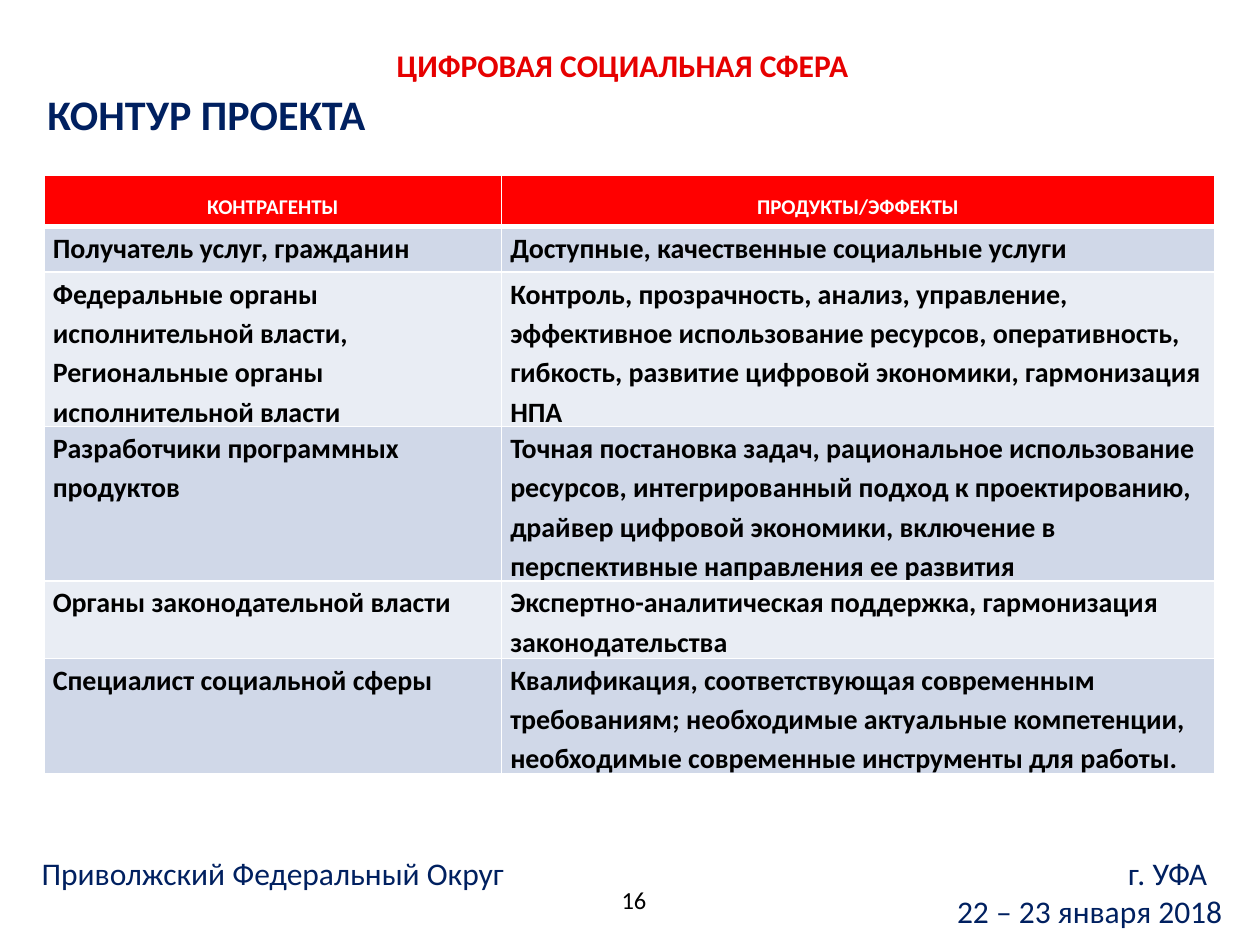
"""Build the project outline slide with a table of counterparties and effects."""
from lxml.etree import SubElement
from pptx import Presentation
from pptx.dml.color import RGBColor
from pptx.enum.text import MSO_ANCHOR, PP_ALIGN
from pptx.oxml.ns import qn
from pptx.util import Pt


def color(value):
    return RGBColor.from_string(value)


def add_run(paragraph, text, size, shade, bold=False):
    run = paragraph.add_run()
    run.text = text
    run.font.name = "Calibri"
    run.font.size = Pt(size)
    run.font.bold = bold
    run.font.color.rgb = color(shade)


presentation = Presentation()
presentation.slide_width = Pt(720)
presentation.slide_height = Pt(540)
slide = presentation.slides.add_slide(presentation.slide_layouts[6])

NAVY = "002060"
labels = [
    ("ЦИФРОВАЯ СОЦИАЛЬНАЯ СФЕРА", (219.6, 23, 280.8, 28), 18, "E60000", True,
     MSO_ANCHOR.MIDDLE, PP_ALIGN.LEFT),
    ("КОНТУР ПРОЕКТА", (20, 46.8, 360, 36), 24, NAVY, True,
     MSO_ANCHOR.TOP, PP_ALIGN.LEFT),
    ("16", (343.4, 499.7, 33.1, 28.8), 14, "000000", False,
     MSO_ANCHOR.MIDDLE, PP_ALIGN.RIGHT),
]
for text, box, size, shade, bold, anchor, align in labels:
    frame = slide.shapes.add_textbox(*map(Pt, box)).text_frame
    frame.word_wrap = True
    frame.vertical_anchor = anchor
    frame.paragraphs[0].alignment = align
    add_run(frame.paragraphs[0], text, size, shade, bold)

rows = [
    (29.5, "КОНТРАГЕНТЫ", "ПРОДУКТЫ/ЭФФЕКТЫ"),
    (26, "Получатель услуг, гражданин", "Доступные, качественные социальные услуги"),
    (88, "Федеральные органы исполнительной власти, Региональные органы исполнительной власти",
     "Контроль, прозрачность, анализ, управление, эффективное использование ресурсов, "
     "оперативность, гибкость, развитие цифровой экономики, гармонизация НПА"),
    (88, "Разработчики программных продуктов",
     "Точная постановка задач, рациональное использование ресурсов, интегрированный подход "
     "к проектированию, драйвер цифровой экономики, включение в перспективные направления "
     "ее развития"),
    (44, "Органы законодательной власти",
     "Экспертно-аналитическая поддержка, гармонизация законодательства"),
    (66, "Специалист социальной сферы",
     "Квалификация, соответствующая современным требованиям; необходимые актуальные "
     "компетенции, необходимые современные инструменты для работы."),
]
column_widths = [261.4, 407.5]
table = slide.shapes.add_table(
    len(rows), 2, Pt(25.2), Pt(100.1), Pt(sum(column_widths)), Pt(sum(row[0] for row in rows))
).table
for column, width in zip(table.columns, column_widths):
    column.width = Pt(width)

for row_index, (height, *texts) in enumerate(rows):
    table.rows[row_index].height = Pt(height)
    header = row_index == 0
    for column_index, text in enumerate(texts):
        cell = table.cell(row_index, column_index)
        paragraph = cell.text_frame.paragraphs[0]
        if header:
            paragraph.alignment = PP_ALIGN.CENTER
            paragraph.line_spacing = 1.5
            add_run(paragraph, text, 12, "FFFFFF", True)
        else:
            cell.margin_left = cell.margin_right = Pt(5)
            cell.margin_top = cell.margin_bottom = Pt(0)
            paragraph.line_spacing = 1.15
            add_run(paragraph, text, 16, "000000", True)
        properties = cell._tc.get_or_add_tcPr()
        for side in ("lnL", "lnR", "lnT", "lnB"):
            thick = (row_index, side) in ((0, "lnB"), (1, "lnT"))
            border = SubElement(properties, qn(f"a:{side}"), w=str(Pt(3 if thick else 1)))
            SubElement(SubElement(border, qn("a:solidFill")), qn("a:srgbClr"), val="FFFFFF")
        cell.fill.solid()
        band = "D0D8E8" if row_index % 2 else "E9EDF4"
        cell.fill.fore_color.rgb = color("FF0000" if header else band)

footer = slide.shapes.add_textbox(Pt(9.4), Pt(488.2), Pt(696.2), Pt(42.5)).text_frame
footer.word_wrap = True
footer.vertical_anchor = MSO_ANCHOR.MIDDLE
footer.margin_left = Pt(14.4)
place = footer.paragraphs[0]
tab_stops = SubElement(place._p.get_or_add_pPr(), qn("a:tabLst"))
SubElement(tab_stops, qn("a:tab"), pos=str(Pt(666)), algn="r")
add_run(place, "Приволжский Федеральный Округ\tг. УФА", 18, NAVY)
dates = footer.add_paragraph()
dates.alignment = PP_ALIGN.RIGHT
add_run(dates, "22 – 23 января 2018", 18, NAVY)

presentation.save("out.pptx")
